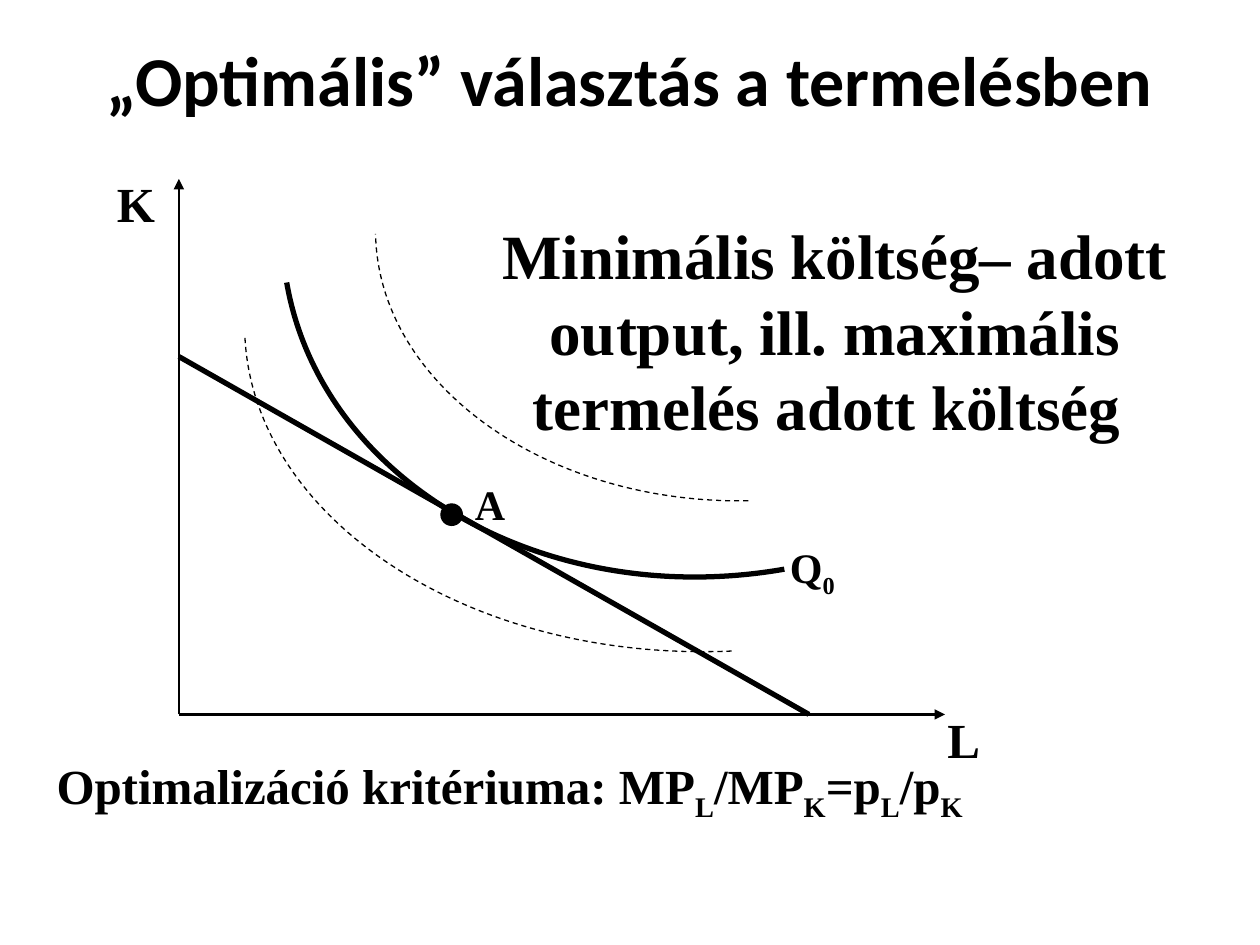
import pptx
import pptx.util
import pptx.dml.color
import pptx.enum.dml
import pptx.enum.shapes
import pptx.enum.text
import pptx.oxml.ns
import lxml.etree

Inches = pptx.util.Inches
Pt = pptx.util.Pt
qn = pptx.oxml.ns.qn
ALIGN = pptx.enum.text.PP_ALIGN
ANCHOR = pptx.enum.text.MSO_ANCHOR

BLACK = pptx.dml.color.RGBColor(0, 0, 0)
SERIF = "Times New Roman"
ORIGIN = (1.42, 5.67)
ARC_RATIO = 0.55


def add_text(slide, box, runs, size, font=SERIF, align=ALIGN.LEFT, anchor=ANCHOR.TOP):
    """Add a bold text box from (text, is_subscript) runs."""
    sp = slide.shapes.add_textbox(*map(Inches, box))
    tf = sp.text_frame
    tf.word_wrap = True
    tf.vertical_anchor = anchor
    p = tf.paragraphs[0]
    p.alignment = align
    for text, subscript in runs:
        r = p.add_run()
        r.text = text
        r.font.name = font
        r.font.size = Pt(size)
        r.font.bold = True
        r.font.color.rgb = BLACK
        if subscript:
            r.font._element.set("baseline", "-25000")


def add_line(slide, start, end, width, arrow=False):
    """Add a straight line, with an arrowhead at its end if asked."""
    sp = slide.shapes.add_connector(
        pptx.enum.shapes.MSO_CONNECTOR.STRAIGHT, *map(Inches, start + end))
    sp.line.color.rgb = BLACK
    sp.line.width = Pt(width)
    if arrow:
        ln = sp.line._get_or_add_ln()
        lxml.etree.SubElement(ln, qn("a:tailEnd"), type="triangle")
    lxml.etree.SubElement(sp._element.spPr, qn("a:effectLst"))


def add_isoquant(slide, box, rotation, width, dashed=False):
    """Add a rotated quarter ellipse as one cubic curve."""
    x, y, w, h = map(Inches, box)
    fb = slide.shapes.build_freeform(x, y)
    controls = [(x + int(w * ARC_RATIO), y), (x + w, y + int(h * (1 - ARC_RATIO)))]
    fb.add_line_segments(controls + [(x + w, y + h)], close=False)
    sp = fb.convert_to_shape()
    outline = next(sp._element.iter(qn("a:path")))
    curve = lxml.etree.SubElement(outline, qn("a:cubicBezTo"))
    for segment in outline.findall(qn("a:lnTo")):
        curve.append(segment[0])
        outline.remove(segment)
    sp.rotation = rotation
    sp.shadow.inherit = False
    sp.fill.background()
    sp.line.color.rgb = BLACK
    sp.line.width = Pt(width)
    if dashed:
        sp.line.dash_style = pptx.enum.dml.MSO_LINE.DASH


def add_point(slide, box):
    """Add a solid dot."""
    sp = slide.shapes.add_shape(
        pptx.enum.shapes.MSO_SHAPE.OVAL, *map(Inches, box))
    sp.shadow.inherit = False
    sp.fill.solid()
    sp.fill.fore_color.rgb = BLACK
    sp.line.color.rgb = BLACK


def main():
    """Build the optimal production choice slide."""
    prs = pptx.Presentation()
    prs.slide_width = Inches(10)
    prs.slide_height = Inches(7.5)
    s = prs.slides.add_slide(prs.slide_layouts[6])

    add_text(s, (0.33, 0, 9.33, 1.25), [("„Optimális” választás a termelésben", False)],
             40, "Calibri", ALIGN.CENTER, ANCHOR.MIDDLE)

    add_line(s, ORIGIN, (7.5, ORIGIN[1]), 1.5, arrow=True)
    add_line(s, ORIGIN, (ORIGIN[0], 1.42), 1.5, arrow=True)
    add_line(s, (ORIGIN[0], 2.83), (6.42, ORIGIN[1]), 3)

    add_isoquant(s, (2.5, 1.92, 3.5, 2.92), 170.1, 3)
    add_point(s, (3.5, 4, 0.17, 0.17))
    add_isoquant(s, (2, 2.58, 3.75, 2.67), 177.5, 0.75, dashed=True)
    add_isoquant(s, (3, 1.83, 2.92, 2.17), 179, 0.75, dashed=True)

    add_text(s, (0.83, 1.33, 0.58, 0.57), [("K", False)], 28)
    add_text(s, (7.42, 5.58, 0.75, 0.57), [("L", False)], 28)
    add_text(s, (3.67, 3.75, 0.42, 0.5), [("A", False)], 24)
    add_text(s, (6.17, 4.25, 0.58, 0.51), [("Q", False), ("0", True)], 24)
    add_text(s, (0.35, 5.95, 7.78, 0.57),
             [("Optimalizáció kritériuma: MP", False), ("L", True),
              ("/MP", False), ("K", True), ("=p", False), ("L", True),
              ("/p", False), ("K", True)], 28)
    add_text(s, (3.75, 1.67, 5.75, 1.9),
             [("Minimális költség– adott output, ill. maximális "
               "termelés adott költség ", False)], 36, align=ALIGN.CENTER)

    prs.save("out.pptx")


if __name__ == "__main__":
    main()
